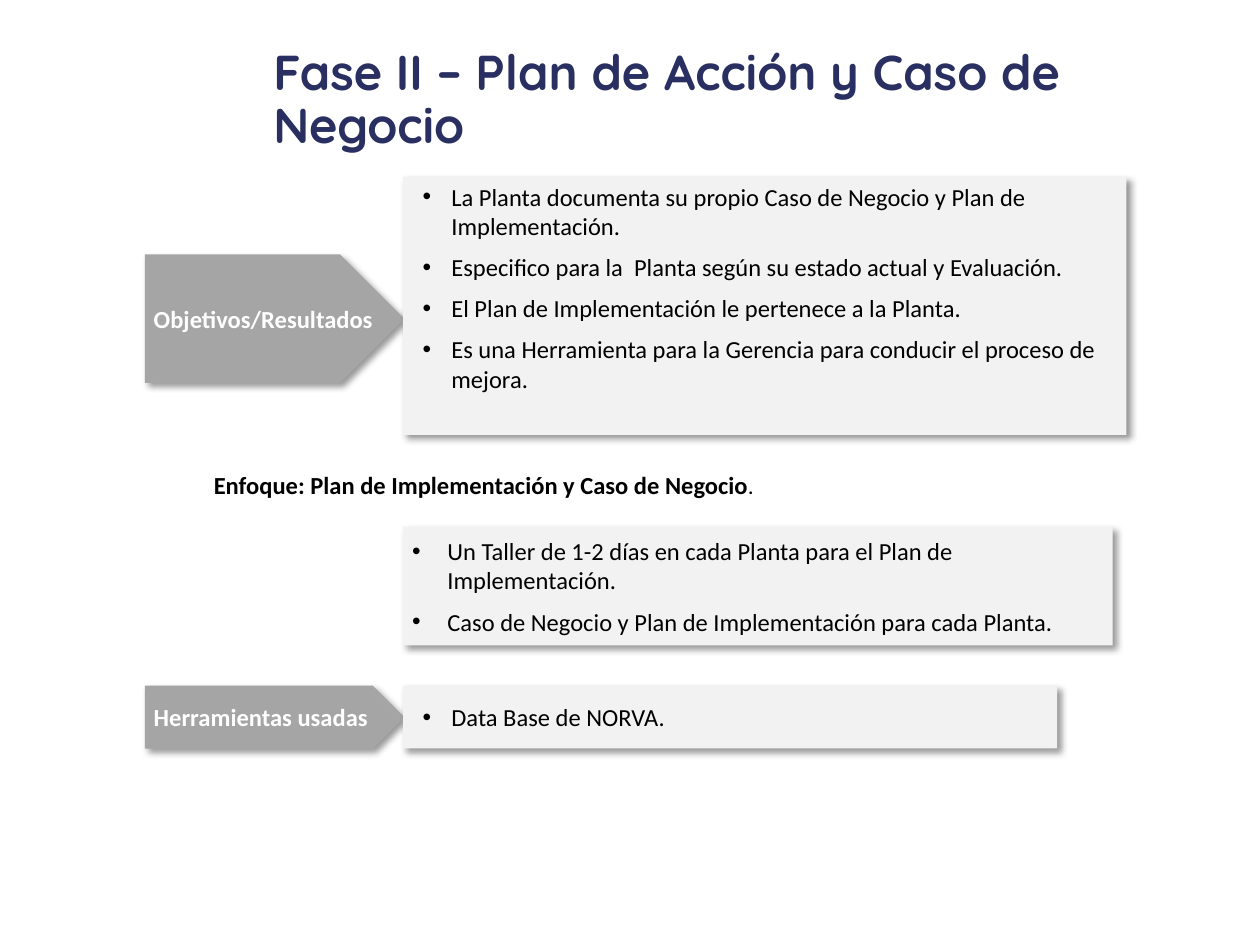
from dataclasses import dataclass

from lxml.etree import SubElement
from pptx import Presentation
from pptx.dml.color import RGBColor
from pptx.enum.shapes import MSO_SHAPE
from pptx.enum.text import MSO_ANCHOR, PP_ALIGN
from pptx.oxml.ns import qn
from pptx.util import Cm, Pt


@dataclass(frozen=True)
class Theme:
    title: RGBColor = RGBColor(0x29, 0x2F, 0x60)
    arrow: RGBColor = RGBColor(0xA5, 0xA5, 0xA5)
    panel: RGBColor = RGBColor(0xF2, 0xF2, 0xF2)
    light: RGBColor = RGBColor(0xFF, 0xFF, 0xFF)
    dark: RGBColor = RGBColor(0, 0, 0)
    title_font: str = "Quicksand"
    body_font: str = "Calibri"
    title_size: Pt = Pt(28)
    body_size: Pt = Pt(14)
    small_size: Pt = Pt(10.5)


@dataclass(frozen=True)
class Area:
    """A rectangle in centimetres."""
    left: float
    top: float
    width: float
    height: float

    def lengths(self):
        return Cm(self.left), Cm(self.top), Cm(self.width), Cm(self.height)


@dataclass(frozen=True)
class Panel:
    area: Area
    items: tuple[str, ...]
    anchor: MSO_ANCHOR = MSO_ANCHOR.MIDDLE
    indent: float = 0.79
    hanging: float = 0.58


@dataclass(frozen=True)
class ArrowLabel:
    area: Area
    text: str


THEME = Theme()
ARROW_LEFT, ARROW_WIDTH, PANEL_LEFT = 2.92, 5.23, 8.13
TOOLS_TOP, TOOLS_HEIGHT = 13.82, 1.27

ARROWS = (
    ArrowLabel(Area(ARROW_LEFT, 5.13, ARROW_WIDTH, 2.59), "Objetivos/Resultados"),
    ArrowLabel(Area(ARROW_LEFT, TOOLS_TOP, ARROW_WIDTH, TOOLS_HEIGHT), "Herramientas usadas"),
)
PANELS = (
    Panel(Area(PANEL_LEFT, 3.56, 14.58, 5.21), (
        "La Planta documenta su propio Caso de Negocio y Plan de Implementación.",
        "Especifico para la  Planta según su estado actual y Evaluación.",
        "El Plan de Implementación le pertenece a la Planta.",
        "Es una Herramienta para la Gerencia para conducir el proceso de mejora.",
    ), MSO_ANCHOR.TOP),
    Panel(Area(PANEL_LEFT, TOOLS_TOP, 13.18, TOOLS_HEIGHT), ("Data Base de NORVA.",)),
    Panel(Area(PANEL_LEFT, 10.62, 14.3, 2.39), (
        "Un Taller de 1-2 días en cada Planta para el Plan de Implementación.",
        "Caso de Negocio y Plan de Implementación para cada Planta.",
    ), indent=0.71, hanging=0.71),
)


def apply(target, **values) -> None:
    for name, value in values.items():
        setattr(target, name, value)


def add_span(para, text: str, color: RGBColor, **changes) -> None:
    span = para.add_run()
    span.text = text
    style = {"name": THEME.body_font, "size": THEME.body_size, "bold": False} | changes
    apply(span.font, **style)
    span.font.color.rgb = color


def add_shadow(box) -> None:
    box.shadow.inherit = False
    effects = box._element.spPr.find(qn("a:effectLst"))
    shadow = SubElement(effects, qn("a:outerShdw"), blurRad=str(Pt(4)), dist=str(Pt(3)),
                        dir=str(45 * 60000), algn="tl", rotWithShape="0")
    color = SubElement(shadow, qn("a:srgbClr"), val=str(THEME.dark))
    SubElement(color, qn("a:alpha"), val="40000")


def add_block(page, kind: MSO_SHAPE, area: Area, fill: RGBColor, **frame):
    """Add a filled, shadowed shape and return its text frame."""
    box = page.shapes.add_shape(kind, *area.lengths())
    box.fill.solid()
    box.fill.fore_color.rgb = fill
    box.line.fill.background()
    add_shadow(box)
    margins = {"margin_left": Cm(0.18), "margin_right": Cm(0.18),
               "margin_top": Cm(0.1), "margin_bottom": Cm(0.1)}
    apply(box.text_frame, **margins, **frame)
    return box.text_frame


def add_arrow(page, label: ArrowLabel) -> None:
    frame = add_block(page, MSO_SHAPE.PENTAGON, label.area, THEME.arrow,
                      vertical_anchor=MSO_ANCHOR.MIDDLE, word_wrap=False)
    para = frame.paragraphs[0]
    para.alignment = PP_ALIGN.LEFT
    add_span(para, label.text, THEME.light, bold=True)


def add_panel(page, panel: Panel) -> None:
    frame = add_block(page, MSO_SHAPE.RECTANGLE, panel.area, THEME.panel,
                      vertical_anchor=panel.anchor, word_wrap=True)
    for index, item in enumerate(panel.items):
        para = frame.add_paragraph() if index else frame.paragraphs[0]
        apply(para, alignment=PP_ALIGN.LEFT, space_after=Pt(2.2),
              space_before=Pt(4.5 if index else 0))
        properties = para._p.get_or_add_pPr()
        properties.set("marL", str(Cm(panel.indent)))
        properties.set("indent", str(Cm(-panel.hanging)))
        SubElement(properties, qn("a:buFont"), typeface="Arial")
        SubElement(properties, qn("a:buChar"), char="•")
        add_span(para, item, THEME.dark)


def add_title(page) -> None:
    box = page.shapes.add_textbox(*Area(5.26, 0.69, 18.95, 2.69).lengths())
    apply(box.text_frame, word_wrap=True, vertical_anchor=MSO_ANCHOR.MIDDLE)
    para = box.text_frame.paragraphs[0]
    para.line_spacing = 0.9
    add_span(para, "Fase II – Plan de Acción y Caso de Negocio", THEME.title,
             name=THEME.title_font, size=THEME.title_size, bold=True)


def add_focus(page) -> None:
    box = page.shapes.add_textbox(*Area(4.06, 9.35, 11.43, 0.86).lengths())
    box.text_frame.word_wrap = False
    para = box.text_frame.paragraphs[0]
    add_span(para, "Enfoque: Plan de Implementación y Caso de Negocio", THEME.dark, bold=True)
    add_span(para, ".", THEME.dark, size=THEME.small_size, bold=True)


def main() -> None:
    deck = Presentation()
    apply(deck, slide_width=Cm(25.4), slide_height=Cm(19.05))
    page = deck.slides.add_slide(deck.slide_layouts[6])
    add_title(page)
    for label in ARROWS:
        add_arrow(page, label)
    add_focus(page)
    for panel in PANELS:
        add_panel(page, panel)
    deck.save("out.pptx")


if __name__ == "__main__":
    main()
